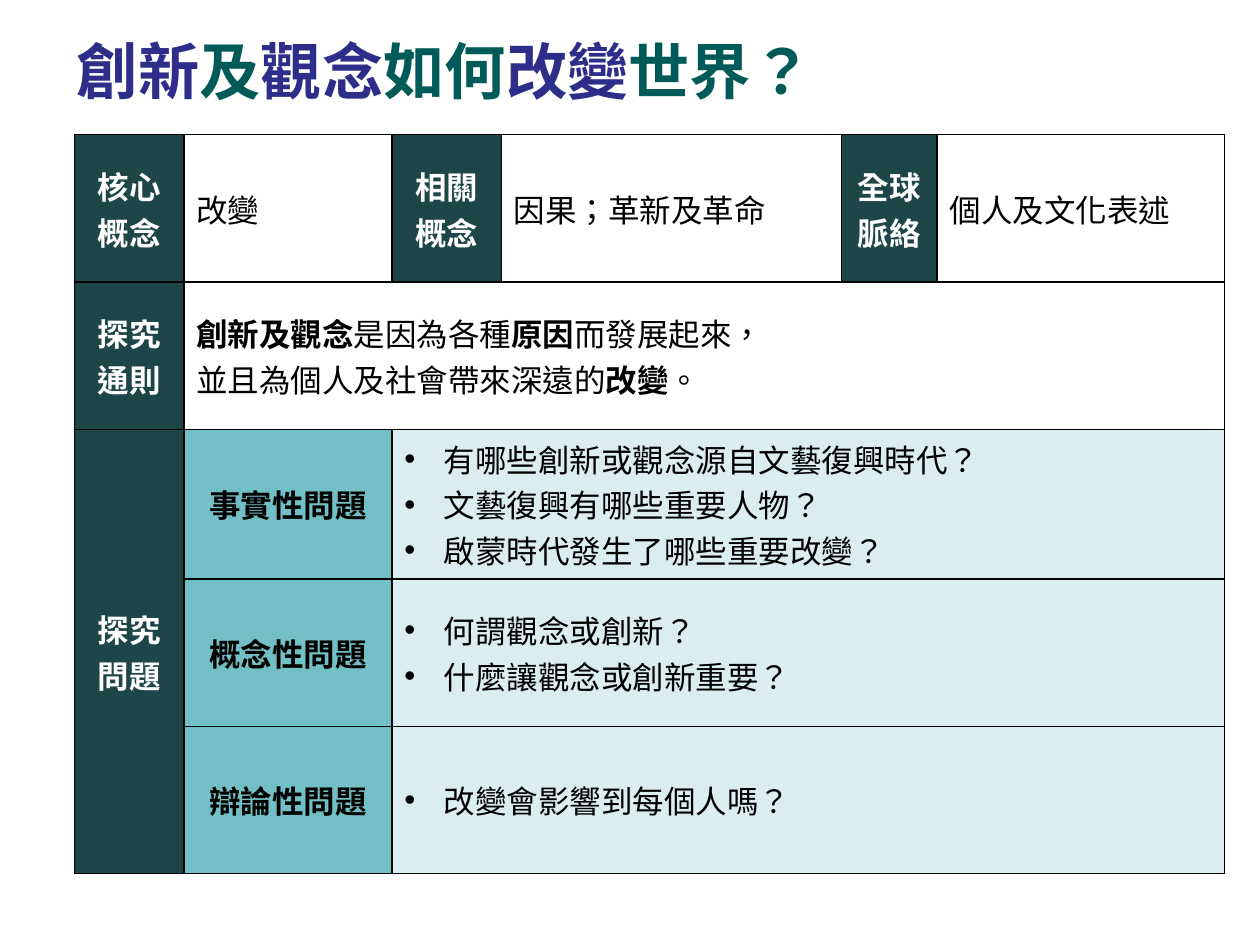
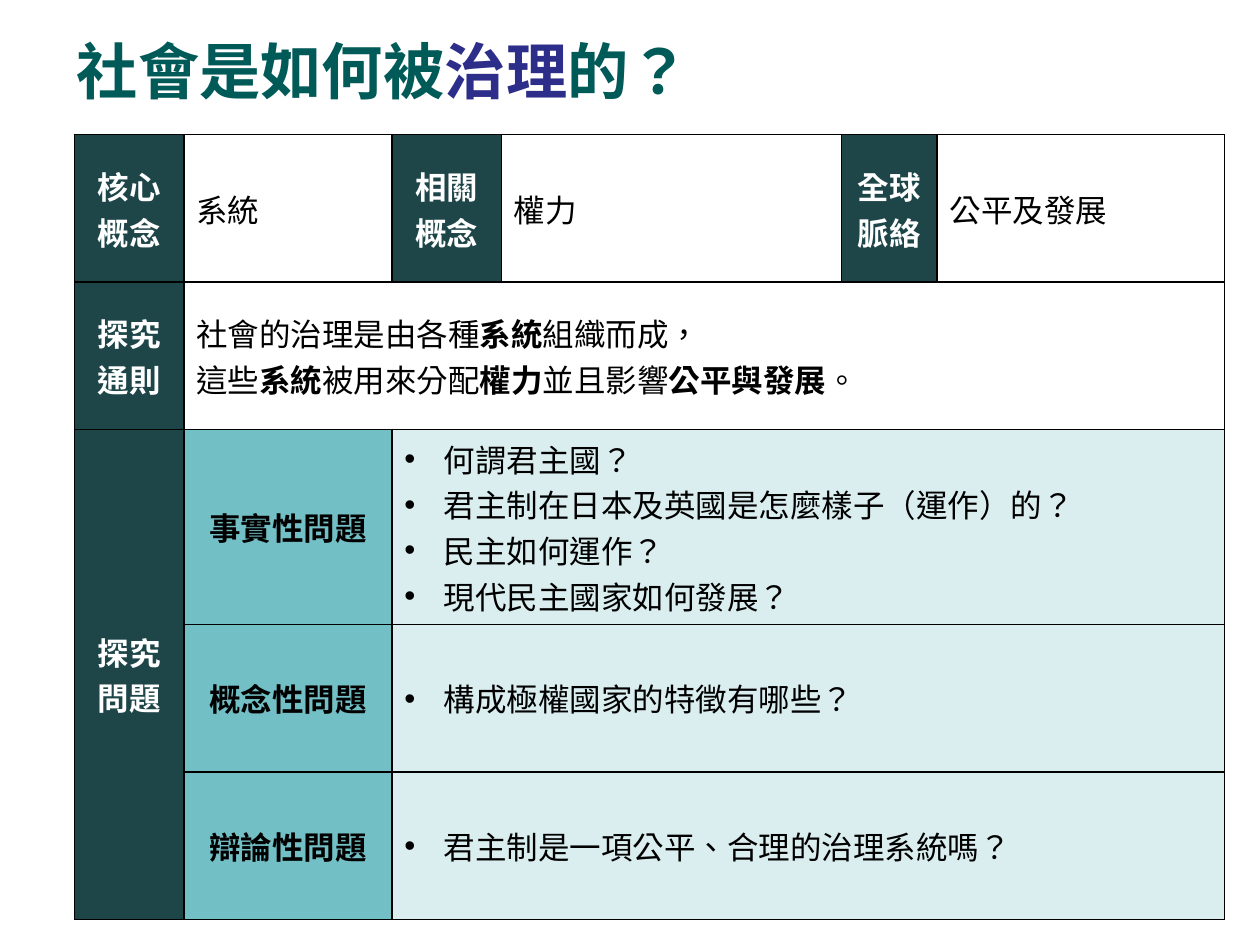
from pptx import Presentation
from pptx.dml.color import RGBColor
from pptx.enum.lang import MSO_LANGUAGE_ID as Lang
from pptx.enum.text import MSO_ANCHOR as Anchor, MSO_AUTO_SIZE as AutoSize, PP_ALIGN as Align
from pptx.oxml import parse_xml
from pptx.oxml.ns import nsdecls
from pptx.util import Pt

COLORS = {"title": "005A58", "accent": "2D2D8A", "header": "1E4649", "kind": "72BFC5",
          "question": "DAEDEF", "white": "FFFFFF", "black": "000000"}
FONT = {"name": "Arial", "language_id": Lang.TRADITIONAL_CHINESE}
TITLE_FONT = {**FONT, "size": Pt(35), "bold": True}
CELL_FONT = {**FONT, "size": Pt(18)}
TITLE_BOX = {"left": Pt(36.7), "top": Pt(15), "width": Pt(648), "height": Pt(50)}
TITLE_FRAME = {"vertical_anchor": Anchor.MIDDLE, "auto_size": AutoSize.NONE, "word_wrap": True}
GRID_LEFT, GRID_TOP, ROW_HEIGHT, ROW_COUNT = 42.5, 77, 84.24, 5
COLUMN_WIDTHS = [62.6, 118.8, 62.6, 194.4, 54.7, 164.2]
CONCEPT_LABELS = ["核心概念", "相關概念", "全球脈絡"]
QUESTION_KINDS = ["事實性問題", "概念性問題", "辯論性問題"]
INDENT = 22.5

UNITS = [
    {
        "title": "*創新*及*觀念*如何*改變*世界？",
        "concepts": ["改變", "因果；革新及革命", "個人及文化表述"],
        "statement": ["*創新及觀念*是因為各種*原因*而發展起來，",
                      "並且為個人及社會帶來深遠的*改變*。"],
        "questions": [
            ["有哪些創新或觀念源自文藝復興時代？", "文藝復興有哪些重要人物？",
             "啟蒙時代發生了哪些重要改變？"],
            ["何謂觀念或創新？", "什麼讓觀念或創新重要？"],
            ["改變會影響到每個人嗎？"],
        ],
    },
    {
        "title": "社會是如何被*治理*的？",
        "concepts": ["系統", "權力", "公平及發展"],
        "statement": ["社會的治理是由各種*系統*組織而成，",
                      "這些*系統*被用來分配*權力*並且影響*公平與發展*。"],
        "questions": [
            ["何謂君主國？", "君主制在日本及英國是怎麼樣子（運作）的？",
             "民主如何運作？", "現代民主國家如何發展？"],
            ["構成極權國家的特徵有哪些？"],
            ["君主制是一項公平、合理的治理系統嗎？"],
        ],
    },
]


class UnitDeck:
    """Holds the deck style and the current slide."""

    def __init__(self):
        self.deck = Presentation()
        self.deck.slide_width, self.deck.slide_height = Pt(720), Pt(540)
        self.slide = None

    def new_slide(self):
        self.slide = self.deck.slides.add_slide(self.deck.slide_layouts[5])

    def apply(self, target, values):
        for name, value in values.items():
            setattr(target, name, value)

    def add_runs(self, paragraph, marked, font, color, marked_bold=None, marked_color=None):
        for index, text in enumerate(marked.split("*")):
            if not text:
                continue
            run = paragraph.add_run()
            run.text = text
            self.apply(run.font, font)
            is_marked = index % 2 == 1
            if is_marked and marked_bold:
                run.font.bold = True
            shade = marked_color if is_marked and marked_color else color
            run.font.color.rgb = RGBColor.from_string(COLORS[shade])

    def title(self, marked):
        heading = self.slide.shapes.title
        self.apply(heading, TITLE_BOX)
        self.apply(heading.text_frame, TITLE_FRAME)
        line = heading.text_frame.paragraphs[0]
        line.alignment = Align.LEFT
        self.add_runs(line, marked, TITLE_FONT, "title", marked_color="accent")

    def grid(self):
        grid = self.slide.shapes.add_table(
            ROW_COUNT, len(COLUMN_WIDTHS), Pt(GRID_LEFT), Pt(GRID_TOP),
            Pt(sum(COLUMN_WIDTHS)), Pt(ROW_COUNT * ROW_HEIGHT)).table
        self.apply(grid, {"first_row": False, "horz_banding": False})
        for column, width in zip(grid.columns, COLUMN_WIDTHS):
            column.width = Pt(width)
        for row in grid.rows:
            row.height = Pt(ROW_HEIGHT)
        for cell in grid.iter_cells():
            cell.fill.background()
            self.border(cell)
        grid.cell(1, 1).merge(grid.cell(1, 5))
        grid.cell(2, 0).merge(grid.cell(4, 0))
        for row in range(2, ROW_COUNT):
            grid.cell(row, 2).merge(grid.cell(row, 5))
        return grid

    def border(self, cell):
        properties = cell._tc.get_or_add_tcPr()
        for position, side in enumerate("LRTB"):
            properties.insert(position, parse_xml(
                f'<a:ln{side} {nsdecls("a")} w="{Pt(1)}"><a:solidFill>'
                f'<a:srgbClr val="{COLORS["black"]}"/></a:solidFill></a:ln{side}>'))

    def fill_cell(self, cell, lines, fill=None, color="black", bold=False,
                  align=Align.LEFT, bulleted=False):
        cell.vertical_anchor = Anchor.MIDDLE
        if fill:
            cell.fill.solid()
            cell.fill.fore_color.rgb = RGBColor.from_string(COLORS[fill])
        frame = cell.text_frame
        for index, text in enumerate(lines):
            line = frame.add_paragraph() if index else frame.paragraphs[0]
            line.alignment = align
            if bulleted:
                self.bullet(line)
            self.add_runs(line, text, {**CELL_FONT, "bold": bold}, color, marked_bold=True)

    def bullet(self, line):
        properties = line._p.get_or_add_pPr()
        properties.set("marL", str(Pt(INDENT)))
        properties.set("indent", str(-Pt(INDENT)))
        properties.append(parse_xml(f'<a:buFont {nsdecls("a")} typeface="Arial"/>'))
        properties.append(parse_xml(f'<a:buChar {nsdecls("a")} char="•"/>'))

    def label(self, cell, text, fill="header", color="white"):
        self.fill_cell(cell, [text], fill, color, bold=True, align=Align.CENTER)

    def unit(self, unit):
        self.new_slide()
        self.title(unit["title"])
        grid = self.grid()
        for index, (label, concept) in enumerate(zip(CONCEPT_LABELS, unit["concepts"])):
            self.label(grid.cell(0, 2 * index), label)
            self.fill_cell(grid.cell(0, 2 * index + 1), [concept])
        self.label(grid.cell(1, 0), "探究通則")
        self.fill_cell(grid.cell(1, 1), unit["statement"])
        self.label(grid.cell(2, 0), "探究問題")
        for row, (kind, questions) in enumerate(zip(QUESTION_KINDS, unit["questions"]), 2):
            self.label(grid.cell(row, 1), kind, "kind", "black")
            self.fill_cell(grid.cell(row, 2), questions, "question", bulleted=True)


def main():
    unit_deck = UnitDeck()
    for unit in UNITS:
        unit_deck.unit(unit)
    unit_deck.deck.save("out.pptx")


if __name__ == "__main__":
    main()
